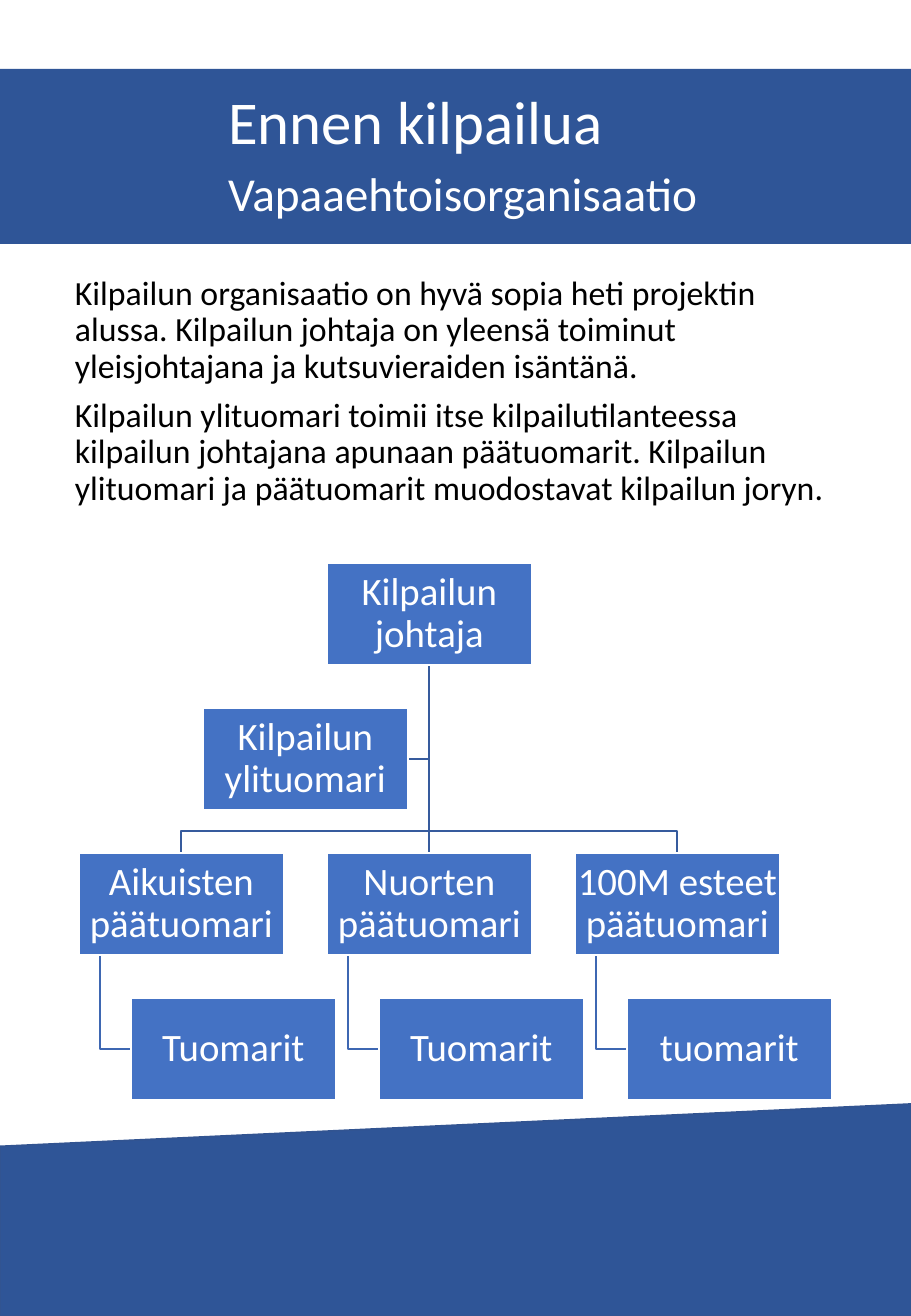
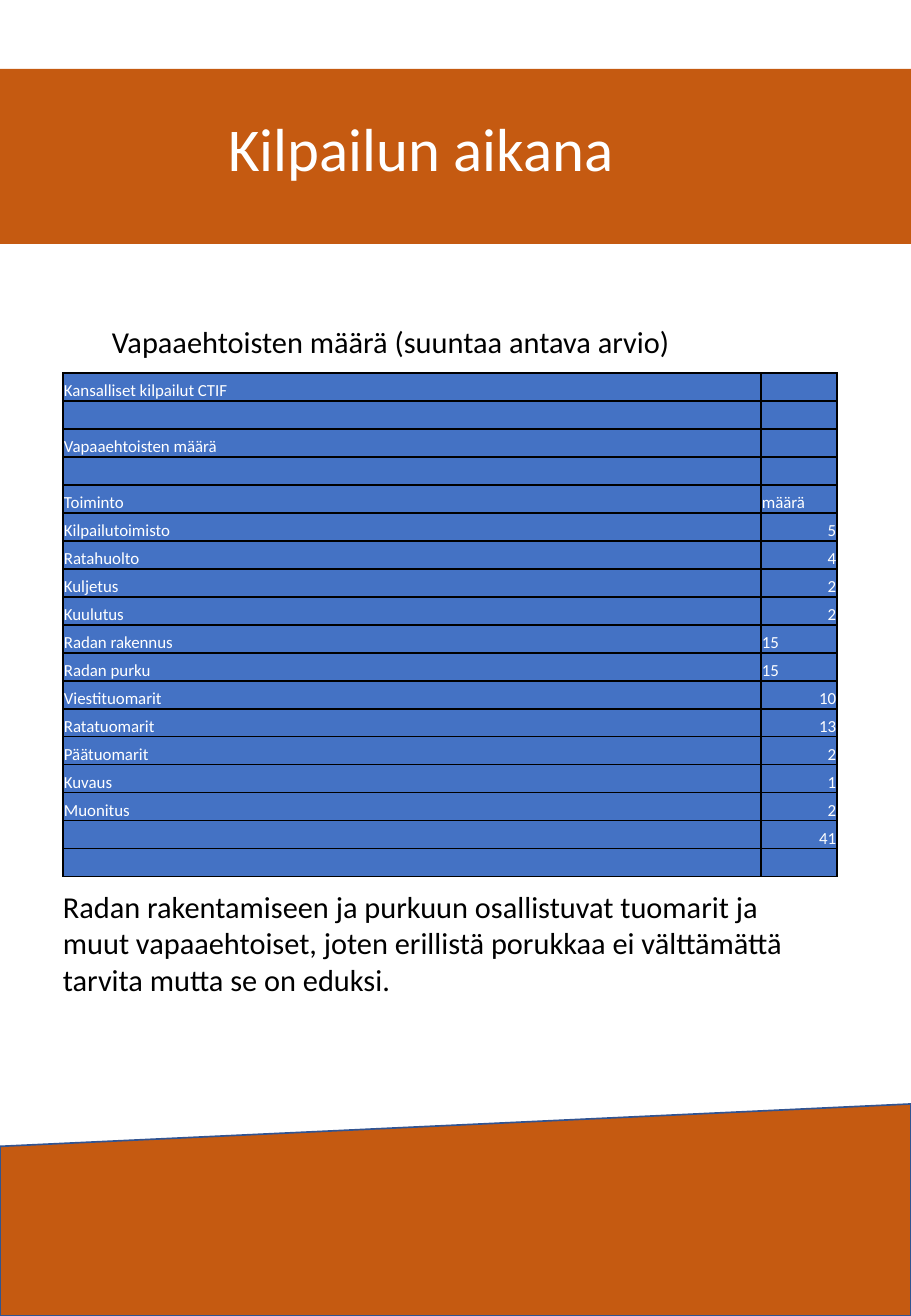
from lxml import etree
from pptx import Presentation
from pptx.dml.color import RGBColor
from pptx.enum.shapes import MSO_CONNECTOR, MSO_SHAPE
from pptx.enum.text import MSO_ANCHOR, MSO_AUTO_SIZE, PP_ALIGN
from pptx.oxml.ns import qn
from pptx.util import Pt

RECTANGLE = MSO_SHAPE.RECTANGLE
MANUAL_INPUT = MSO_SHAPE.FLOWCHART_MANUAL_INPUT
STRAIGHT = MSO_CONNECTOR.STRAIGHT
TOP, MIDDLE, BOTTOM = MSO_ANCHOR.TOP, MSO_ANCHOR.MIDDLE, MSO_ANCHOR.BOTTOM
LEFT, CENTER, RIGHT = PP_ALIGN.LEFT, PP_ALIGN.CENTER, PP_ALIGN.RIGHT
NO_FIT = MSO_AUTO_SIZE.NONE

PX = 7526
WIDTH, HEIGHT = 911, 1316
TITLE_ONLY = 5
FONT = "Calibri"
WHITE = RGBColor(0xFF, 0xFF, 0xFF)
BLACK = RGBColor(0x00, 0x00, 0x00)
NAVY = RGBColor(0x2F, 0x55, 0x97)
ORANGE = RGBColor(0xC5, 0x5A, 0x11)
BLUE = RGBColor(0x44, 0x72, 0xC4)
FOOTER_EDGE = RGBColor(0x32, 0x54, 0x91)
TRUNK = RGBColor(0x36, 0x5B, 0x9D)
TWIG = RGBColor(0x3E, 0x67, 0xB2)

SPACED = {"line_spacing": 0.9, "space_before": Pt(7.5)}
BOX_W, BOX_H = 205, 102
COLUMN_LEFT, COLUMN_STEP = 79, 248
ROW_TOP, ROW_STEP = 563, 145
CELL_SIZE = 10

INTRO = [
    "Kilpailun organisaatio on hyvä sopia heti projektin alussa. Kilpailun johtaja on yleensä "
    "toiminut yleisjohtajana ja kutsuvieraiden isäntänä.",
    "Kilpailun ylituomari toimii itse kilpailutilanteessa kilpailun johtajana apunaan "
    "päätuomarit. Kilpailun ylituomari ja päätuomarit muodostavat kilpailun joryn.",
]
BRANCHES = [
    ("Aikuisten päätuomari", "Tuomarit"),
    ("Nuorten päätuomari", "Tuomarit"),
    ("100M esteet päätuomari", "tuomarit"),
]
VOLUNTEERS = [
    ("Kansalliset kilpailut CTIF", ""),
    ("", ""),
    ("Vapaaehtoisten määrä", ""),
    ("", ""),
    ("Toiminto", "määrä"),
    ("Kilpailutoimisto", 5),
    ("Ratahuolto", 4),
    ("Kuljetus", 2),
    ("Kuulutus", 2),
    ("Radan rakennus", "15"),
    ("Radan purku", "15"),
    ("Viestituomarit", 10),
    ("Ratatuomarit", 13),
    ("Päätuomarit", 2),
    ("Kuvaus", 1),
    ("Muonitus", 2),
    ("", 41),
    ("", ""),
]
CREW_NOTE = (
    "Radan rakentamiseen ja purkuun osallistuvat tuomarit ja muut vapaaehtoiset, joten "
    "erillistä porukkaa ei välttämättä tarvita mutta se on eduksi."
)


def px(*lengths):
    """Turn pixel lengths into EMU."""
    return [length * PX for length in lengths]


def apply(target, values):
    """Set each named format value on the target."""
    for name, value in values.items():
        setattr(target, name, value)


class Deck:
    """Hold the shared style and the slide being built."""

    def __init__(self):
        """Start an empty presentation of the right size."""
        self.presentation = Presentation()
        apply(self.presentation, {"slide_width": WIDTH * PX, "slide_height": HEIGHT * PX})
        self.shapes = None

    def new_slide(self, accent, title_box, title_lines):
        """Add a slide with its title band, footer and title."""
        layout = self.presentation.slide_layouts[TITLE_ONLY]
        self.shapes = self.presentation.slides.add_slide(layout).shapes
        self.shape(RECTANGLE, (0, 69, WIDTH, 175), accent)
        self.shape(MANUAL_INPUT, (0, 1104, WIDTH, 212), accent, FOOTER_EDGE)
        title = self.shapes.title
        apply(title, dict(zip(("left", "top", "width", "height"), px(*title_box))))
        apply(title.text_frame, {"auto_size": NO_FIT, "vertical_anchor": TOP})
        self.fill_frame(title.text_frame, title_lines, WHITE, SPACED)
        self.shapes.element.append(title.element)

    def fill_frame(self, frame, lines, color, layout=None):
        """Fill a text frame with (text, size) paragraphs."""
        frame.word_wrap = True
        for index, (text, size) in enumerate(lines):
            paragraph = frame.add_paragraph() if index else frame.paragraphs[0]
            apply(paragraph, {"alignment": LEFT, **(layout or {})})
            if text:
                run = paragraph.add_run()
                run.text = text
                apply(run.font, {"name": FONT, "size": Pt(size)})
                run.font.color.rgb = color
            else:
                etree.SubElement(paragraph._p, qn("a:endParaRPr"), sz=str(size * 100))

    def text(self, box, lines, layout=None):
        """Add a text box in black."""
        self.fill_frame(self.shapes.add_textbox(*px(*box)).text_frame, lines, BLACK, layout)

    def shape(self, kind, box, fill, edge=None):
        """Add a filled preset shape, outlined if an edge colour is given."""
        shape = self.shapes.add_shape(kind, *px(*box))
        shape.shadow.inherit = False
        shape.fill.solid()
        shape.fill.fore_color.rgb = fill
        if edge is None:
            shape.line.fill.background()
        else:
            self.stroke(shape.line, edge)
        return shape

    def stroke(self, line, color):
        """Give a line its colour and width."""
        line.color.rgb = color
        line.width = Pt(1)

    def role(self, left, top, label):
        """Add one box of the organisation chart."""
        frame = self.shape(RECTANGLE, (left, top, BOX_W, BOX_H), BLUE, WHITE).text_frame
        margins = dict.fromkeys(
            ("margin_left", "margin_right", "margin_top", "margin_bottom"), 2 * PX)
        apply(frame, {"vertical_anchor": MIDDLE, **margins})
        self.fill_frame(frame, [(label, 23)], WHITE, {"alignment": CENTER, "line_spacing": 0.9})

    def link(self, color, start, *bends):
        """Join chart boxes by a straight connector or a bent open line."""
        if len(bends) == 1:
            line = self.shapes.add_connector(STRAIGHT, *px(*start, *bends[0]))
            etree.SubElement(line._element.spPr, qn("a:effectLst"))
        else:
            builder = self.shapes.build_freeform(*start, scale=PX)
            line = builder.add_line_segments(bends, close=False).convert_to_shape()
            line.shadow.inherit = False
            line.fill.background()
        self.stroke(line.line, color)

    def table(self, left, top, widths, row_height, rows):
        """Add a gridded table with numbers aligned right."""
        size = (sum(widths), row_height * len(rows))
        table = self.shapes.add_table(len(rows), len(widths), *px(left, top, *size)).table
        apply(table, {"first_row": False, "horz_banding": False})
        for column, width in zip(table.columns, widths):
            column.width = width * PX
        for row, values in zip(table.rows, rows):
            row.height = row_height * PX
            for cell, value in zip(row.cells, values):
                self.cell(cell, value)

    def cell(self, cell, value):
        """Fill and border one table cell."""
        apply(cell, {"margin_left": PX, "margin_right": PX, "margin_top": PX,
                     "margin_bottom": 0, "vertical_anchor": BOTTOM})
        properties = cell._tc.get_or_add_tcPr()
        for side in ("a:lnL", "a:lnR", "a:lnT", "a:lnB"):
            border = etree.SubElement(properties, qn(side), w=str(int(Pt(1))))
            fill = etree.SubElement(border, qn("a:solidFill"))
            etree.SubElement(fill, qn("a:srgbClr"), val=str(BLACK))
        cell.fill.solid()
        cell.fill.fore_color.rgb = BLUE
        alignment = RIGHT if isinstance(value, int) else LEFT
        self.fill_frame(cell.text_frame, [(str(value), CELL_SIZE)], WHITE,
                        {"alignment": alignment})


def organisation_chart(deck):
    """Draw the tree of competition roles."""
    columns = [COLUMN_LEFT + COLUMN_STEP * index for index in range(len(BRANCHES))]
    leader_top, deputy_top, judge_top, team_top = [ROW_TOP + ROW_STEP * row for row in range(4)]
    leader_left = columns[1]
    deputy_left = leader_left - COLUMN_STEP // 2
    center = leader_left + BOX_W // 2
    leader_foot = (center, leader_top + BOX_H)
    deputy_middle = deputy_top + BOX_H // 2
    junction = judge_top - 22

    deck.link(TRUNK, leader_foot, (center, deputy_middle), (deputy_left + BOX_W, deputy_middle))
    for left in columns:
        target = left + BOX_W // 2
        bends = [] if target == center else [(center, junction), (target, junction)]
        deck.link(TRUNK, leader_foot, *bends, (target, judge_top))

    deck.role(leader_left, leader_top, "Kilpailun johtaja")
    deck.role(deputy_left, deputy_top, "Kilpailun ylituomari")
    for left, (judge, team) in zip(columns, BRANCHES):
        stem, team_left, team_middle = left + 21, left + 52, team_top + BOX_H // 2
        deck.link(TWIG, (stem, judge_top + BOX_H), (stem, team_middle), (team_left, team_middle))
        deck.role(left, judge_top, judge)
        deck.role(team_left, team_top, team)


def main():
    """Build both slides and save them."""
    deck = Deck()
    deck.new_slide(NAVY, (216, 86, 501, 77),
                   [("Ennen kilpailua", 36), ("Vapaaehtoisorganisaatio", 28)])
    deck.text((63, 270, 786, 289), [(paragraph, 20) for paragraph in INTRO], SPACED)
    organisation_chart(deck)

    deck.new_slide(ORANGE, (216, 113, 470, 77), [("Kilpailun aikana", 36)])
    deck.table(63, 373, (698, 76), 28, VOLUNTEERS)
    deck.text((100, 317, 600, 49), [("Vapaaehtoisten määrä (suuntaa antava arvio)", 18)])
    deck.text((51, 882, 786, 123), [(CREW_NOTE, 18)])
    deck.presentation.save("out.pptx")


if __name__ == "__main__":
    main()
